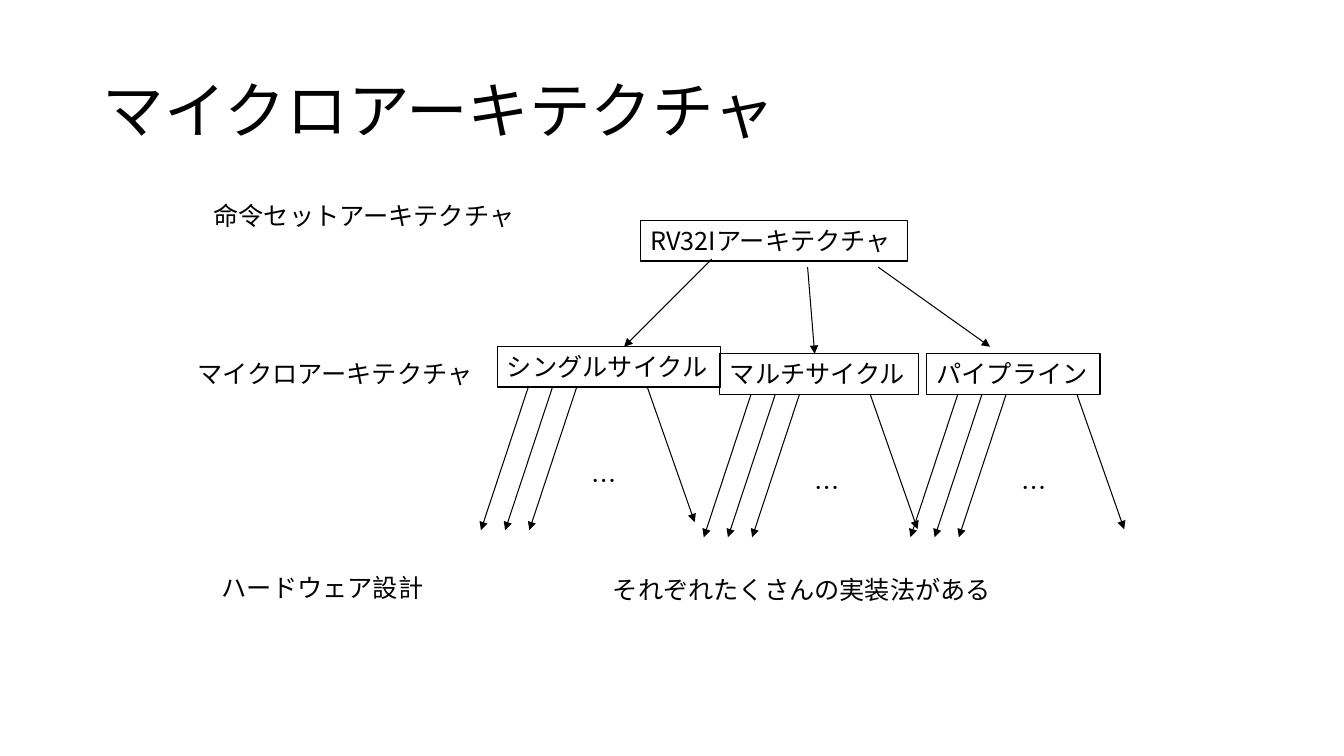
from dataclasses import dataclass

from pptx import Presentation
from pptx.dml.color import RGBColor
from pptx.enum.shapes import MSO_CONNECTOR as Connector, MSO_SHAPE as Preset
from pptx.enum.text import MSO_ANCHOR as Anchor, MSO_AUTO_SIZE as AutoSize, PP_ALIGN as Align
from pptx.oxml.ns import qn
from pptx.slide import Slide
from pptx.text.text import TextFrame
from pptx.util import Inches, Pt

BLACK = RGBColor(0x00, 0x00, 0x00)
FONT = "Noto Sans CJK JP"
LINE_WIDTH = Pt(0.75)
TEXT_HEIGHT = 0.4


@dataclass(frozen=True)
class Label:
    text: str
    left: float
    top: float
    width: float


@dataclass(frozen=True)
class Arrow:
    x1: float
    y1: float
    x2: float
    y2: float


CAPTIONS = [
    Label("命令セットアーキテクチャ", 2.02, 1.94, 3.23),
    Label("マイクロアーキテクチャ", 1.86, 3.51, 2.98),
    Label("ハードウェア設計", 2.1, 5.63, 2.22),
    Label("それぞれたくさんの実装法がある", 5.98, 5.65, 3.99),
]
INSTRUCTION_SET = Label("RV32Iアーキテクチャ", 6.35, 2.19, 2.65)
MICROARCHITECTURES = [
    Label("シングルサイクル", 4.93, 3.44, 2.22),
    Label("マルチサイクル", 7.14, 3.51, 1.97),
    Label("パイプライン", 9.19, 3.51, 1.72),
]
BRANCHES = [
    Arrow(7.06, 2.57, 6.19, 3.44),
    Arrow(8.01, 2.65, 8.08, 3.51),
    Arrow(8.71, 2.65, 9.82, 3.44),
]


def write_text(frame: TextFrame, text: str, *, size: float = 18,
               anchor: Anchor = Anchor.TOP, wrap: bool = False,
               auto_size: AutoSize = AutoSize.SHAPE_TO_FIT_TEXT,
               line_spacing: float = 1.0) -> None:
    frame.word_wrap = wrap
    frame.auto_size = auto_size
    frame.vertical_anchor = anchor
    para = frame.paragraphs[0]
    para.alignment = Align.LEFT
    para.line_spacing = line_spacing
    span = para.add_run()
    span.text = text
    span.font.size = Pt(size)
    span.font.name = FONT
    span.font.color.rgb = BLACK
    east_asian = span.font._element.makeelement(qn("a:ea"), {"typeface": FONT})
    span.font._element.find(qn("a:latin")).addnext(east_asian)


def add_label(page: Slide, label: Label, *, framed: bool = False) -> None:
    area = [Inches(n) for n in (label.left, label.top, label.width, TEXT_HEIGHT)]
    if framed:
        box = page.shapes.add_shape(Preset.RECTANGLE, *area)
        box.shadow.inherit = False
        box.fill.background()
        box.line.color.rgb = BLACK
        box.line.width = LINE_WIDTH
    else:
        box = page.shapes.add_textbox(*area)
    write_text(box.text_frame, label.text)


def add_arrow(page: Slide, arrow: Arrow) -> None:
    ends = [Inches(n) for n in (arrow.x1, arrow.y1, arrow.x2, arrow.y2)]
    connector = page.shapes.add_connector(Connector.STRAIGHT, *ends)
    connector.line.color.rgb = BLACK
    connector.line.width = LINE_WIDTH
    outline = connector.line._get_or_add_ln()
    outline.append(outline.makeelement(qn("a:tailEnd"), {"type": "triangle"}))
    outline.addnext(outline.makeelement(qn("a:effectLst"), {}))


def add_implementations(page: Slide, parent: Label) -> None:
    """Draw the fan of arrows and the ellipsis below one microarchitecture."""
    top = parent.top + TEXT_HEIGHT
    first = parent.left + 0.31
    for start, run, drop in [(0, -0.47, 1.42), (0.24, -0.47, 1.42),
                             (0.48, -0.47, 1.42), (1.18, 0.47, 1.34)]:
        x = first + start
        add_arrow(page, Arrow(x, top, x + run, top + drop))
    add_label(page, Label("…", parent.left + 0.84, parent.top + 1.13, 0.45))


def main() -> None:
    deck = Presentation()
    deck.slide_width, deck.slide_height = Inches(13.33), Inches(7.5)
    page = deck.slides.add_slide(deck.slide_layouts.get_by_name("Title Only"))

    title = page.shapes.title
    title.left, title.top = Inches(0.92), Inches(0.4)
    title.width, title.height = Inches(11.5), Inches(1.45)
    write_text(title.text_frame, "マイクロアーキテクチャ", size=44, anchor=Anchor.MIDDLE,
               wrap=True, auto_size=AutoSize.NONE, line_spacing=0.9)

    for caption in CAPTIONS:
        add_label(page, caption)
    for box in [INSTRUCTION_SET, *MICROARCHITECTURES]:
        add_label(page, box, framed=True)
    for branch in BRANCHES:
        add_arrow(page, branch)
    for microarchitecture in MICROARCHITECTURES:
        add_implementations(page, microarchitecture)

    deck.save("out.pptx")


if __name__ == "__main__":
    main()
